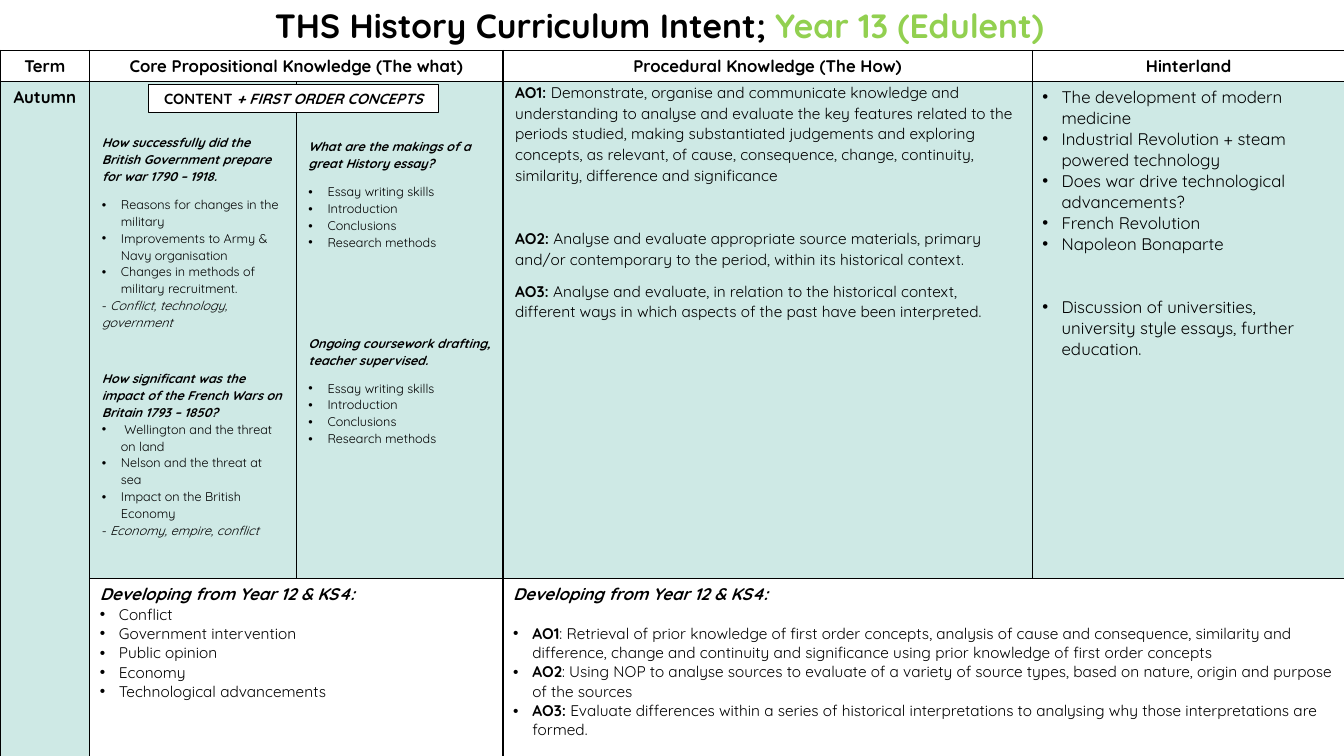
from dataclasses import dataclass

from lxml import etree
from pptx import Presentation
from pptx.dml.color import RGBColor
from pptx.enum.shapes import MSO_SHAPE
from pptx.enum.text import MSO_ANCHOR, PP_ALIGN
from pptx.oxml.ns import qn
from pptx.util import Inches, Pt

CENTER, LEFT = PP_ALIGN.CENTER, PP_ALIGN.LEFT
MIDDLE, TOP = MSO_ANCHOR.MIDDLE, MSO_ANCHOR.TOP
RECTANGLE = MSO_SHAPE.RECTANGLE
TITLE_ONLY = 5
FONT = "Quicksand"
COLORS = {"ink": "000000", "paper": "FFFFFF", "mint": "CEE9E5", "green": "92D050"}
COLUMN_WIDTHS = (0.89, 2.05, 2.05, 5.25, 3.1)
ROW_HEIGHTS = (0.31, 4.93, 1.77)
SIDE_INSET = 0.12
HANGING = 0.19


@dataclass(frozen=True)
class Span:
    text: str
    bold: bool = False
    italic: bool = False


@dataclass(frozen=True)
class Para:
    spans: tuple[Span, ...]
    size: float = 12
    bullet: bool = False
    after: float = 0
    spacing: float = 1.0
    align: PP_ALIGN = LEFT


@dataclass(frozen=True)
class CellText:
    row: int
    column: int
    paras: list[Para]
    fill: str = "paper"
    last_row: int | None = None
    last_column: int | None = None
    side: float = 0.1
    top: float = 0.05


def label(text: str) -> list[Para]:
    return [Para((Span(text, bold=True),), align=CENTER)]


def heading(text: str, size: float = 9, after: float = 8, spacing: float = 1.07) -> Para:
    return Para((Span(text, bold=True, italic=True),), size, after=after, spacing=spacing)


def bullets(*items: str, size: float = 9, last_after: float = 0, spacing: float = 1.07) -> list[Para]:
    """Make a list whose last item is followed by a gap of last_after points."""
    return [Para((Span(item),), size, True, last_after if number == len(items) else 0, spacing)
            for number, item in enumerate(items, 1)]


def concepts(text: str, after: float = 0) -> Para:
    return Para((Span("- "), Span(text, italic=True)), 9, after=after, spacing=1.07)


def objective(name: str, text: str, after: float = 0, bullet: bool = False,
              spacing: float = 1.0) -> Para:
    return Para((Span(name, bold=True), Span(text)), 11, bullet, after, spacing)


ESSAY_SKILLS = ("Essay writing skills", "Introduction", "Conclusions", "Research methods")
DEVELOPING = "Developing from Year 12 & KS4:"

CELLS = [
    CellText(0, 0, label("Term")),
    CellText(0, 1, label("Core Propositional Knowledge (The what)"), last_column=2),
    CellText(0, 3, label("Procedural Knowledge (The How)")),
    CellText(0, 4, label("Hinterland")),
    CellText(1, 0, label("Autumn"), "mint", last_row=2),
    CellText(1, 1, [
        heading("How successfully did the British Government prepare for war 1790 – 1918."),
        *bullets("Reasons for changes in the military",
                 "Improvements to Army & Navy organisation",
                 "Changes in methods of military recruitment."),
        concepts("Conflict, technology, government", after=28),
        heading("How significant was the impact of the French Wars on Britain 1793 – 1850?", after=0),
        *bullets(" Wellington and the threat on land",
                 "Nelson and the threat at sea",
                 "Impact on the British Economy"),
        concepts("Economy, empire, conflict"),
    ], "mint", side=SIDE_INSET, top=0.52),
    CellText(1, 2, [
        heading("What are the makings of a great History essay?"),
        *bullets(*ESSAY_SKILLS, last_after=60),
        heading("Ongoing coursework drafting, teacher supervised."),
        *bullets(*ESSAY_SKILLS),
    ], "mint", side=SIDE_INSET, top=0.56),
    CellText(1, 3, [
        objective("AO1: ", "Demonstrate, organise and communicate knowledge and understanding to "
                  "analyse and evaluate the key features related to the periods studied, making "
                  "substantiated judgements and exploring concepts, as relevant, of cause, "
                  "consequence, change, continuity, similarity, difference and significance",
                  after=30.7, spacing=1.07),
        objective("AO2: ", "Analyse and evaluate appropriate source materials, primary and/or "
                  "contemporary to the period, within its historical context.", after=8, spacing=1.07),
        objective("AO3: ", "Analyse and evaluate, in relation to the historical context, different "
                  "ways in which aspects of the past have been interpreted.", after=8, spacing=1.07),
    ], "mint", side=SIDE_INSET, top=0),
    CellText(1, 4, bullets(
        "The development of modern medicine",
        "Industrial Revolution + steam powered technology",
        "Does war drive technological advancements?",
        "French Revolution", "Napoleon Bonaparte", size=12, last_after=30, spacing=1.0)
        + bullets("Discussion of universities, university style essays, further education.",
                  size=12, spacing=1.0), "mint"),
    CellText(2, 1, [
        heading(DEVELOPING, 12, 0, 1.0),
        *bullets("Conflict", "Government intervention", "Public opinion", "Economy",
                 "Technological advancements", size=11, spacing=1.0),
    ], last_column=2),
    CellText(2, 3, [
        heading(DEVELOPING, 12, 13.75, 1.0),
        objective("AO1", ": Retrieval of prior knowledge of first order concepts, analysis of cause "
                  "and consequence, similarity and difference, change and continuity and "
                  "significance using prior knowledge of first order concepts", bullet=True),
        objective("AO2", ": Using NOP to analyse sources to evaluate of a variety of source types, "
                  "based on nature, origin and purpose of the sources", bullet=True),
        objective("AO3: ", "Evaluate differences within a series of historical interpretations to "
                  "analysing why those interpretations are formed.", bullet=True),
    ], last_column=4),
]


def add_span(para, text: str, *, size: float, bold: bool = False, italic: bool = False,
             color: str = "ink") -> None:
    span = para.add_run()
    span.text = text
    span.font.name, span.font.size = FONT, Pt(size)
    span.font.bold, span.font.italic = bold, italic
    span.font.color.rgb = RGBColor.from_string(COLORS[color])


def add_bullet(para) -> None:
    properties = para._p.get_or_add_pPr()
    properties.set("marL", str(Inches(HANGING)))
    properties.set("indent", str(-Inches(HANGING)))
    etree.SubElement(properties, qn("a:buFont"), typeface="Arial")
    etree.SubElement(properties, qn("a:buChar"), char="•")


def write_paras(frame, paras: list[Para]) -> None:
    for index, content in enumerate(paras):
        para = frame.add_paragraph() if index else frame.paragraphs[0]
        para.alignment = content.align
        para.line_spacing = content.spacing
        para.space_before, para.space_after = Pt(0), Pt(content.after)
        if content.bullet:
            add_bullet(para)
        for span in content.spans:
            add_span(para, span.text, size=content.size, bold=span.bold, italic=span.italic)


def add_borders(cell) -> None:
    properties = cell._tc.get_or_add_tcPr()
    for index, side in enumerate(("lnL", "lnR", "lnT", "lnB")):
        line = etree.Element(qn(f"a:{side}"), w=str(Pt(1)))
        fill = etree.SubElement(line, qn("a:solidFill"))
        etree.SubElement(fill, qn("a:srgbClr"), val=COLORS["ink"])
        properties.insert(index, line)


def add_curriculum_table(page) -> None:
    table = page.shapes.add_table(len(ROW_HEIGHTS), len(COLUMN_WIDTHS), Inches(0), Inches(0.5),
                                  Inches(sum(COLUMN_WIDTHS)), Inches(sum(ROW_HEIGHTS))).table
    table.first_row = table.horz_banding = False
    for column, width in zip(table.columns, COLUMN_WIDTHS):
        column.width = Inches(width)
    for row, height in zip(table.rows, ROW_HEIGHTS):
        row.height = Inches(height)
    for content in CELLS:
        cell = table.cell(content.row, content.column)
        if content.last_row or content.last_column:
            cell.merge(table.cell(content.last_row or content.row,
                                  content.last_column or content.column))
        cell.margin_left = cell.margin_right = Inches(content.side)
        cell.margin_top, cell.margin_bottom = Inches(content.top), Inches(min(content.top, 0.05))
        cell.vertical_anchor = TOP
        cell.fill.solid()
        cell.fill.fore_color.rgb = RGBColor.from_string(COLORS[content.fill])
        write_paras(cell.text_frame, content.paras)
    for cell in table.iter_cells():
        add_borders(cell)


def add_title(page) -> None:
    title = page.shapes.title
    title.left, title.top, title.width, title.height = map(Inches, (2.6, 0, 7.88, 0.5))
    frame = title.text_frame
    frame.word_wrap, frame.vertical_anchor = False, MIDDLE
    para = frame.paragraphs[0]
    para.alignment = CENTER
    add_span(para, "THS History Curriculum Intent; ", size=24, bold=True)
    add_span(para, "Year 13 (Edulent)", size=24, bold=True, color="green")


def add_content_banner(page) -> None:
    box = page.shapes.add_shape(RECTANGLE, *map(Inches, (1.47, 0.84, 2.88, 0.28)))
    box.shadow.inherit = False
    box.fill.solid()
    box.fill.fore_color.rgb = RGBColor.from_string(COLORS["paper"])
    box.line.color.rgb = RGBColor.from_string(COLORS["ink"])
    box.line.width = Pt(0.75)
    box.text_frame.word_wrap = True
    write_paras(box.text_frame, [Para((Span("CONTENT ", True), Span("+ FIRST ORDER CONCEPTS", True, True)),
                                      10.5, align=CENTER)])


def main() -> None:
    deck = Presentation()
    deck.slide_width, deck.slide_height = Inches(13.33), Inches(7.5)
    page = deck.slides.add_slide(deck.slide_layouts[TITLE_ONLY])
    add_title(page)
    add_curriculum_table(page)
    add_content_banner(page)
    deck.save("out.pptx")


if __name__ == "__main__":
    main()
